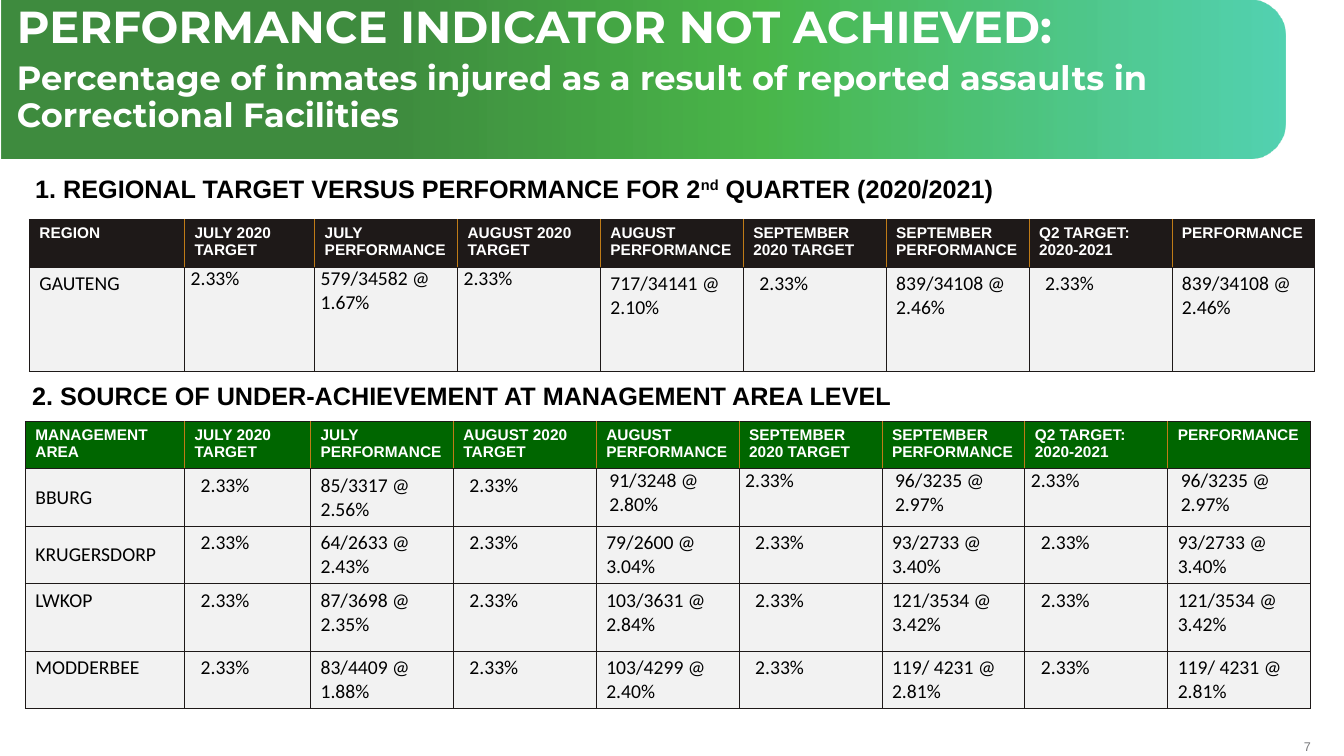
from copy import deepcopy
from dataclasses import dataclass

from lxml import etree
from pptx import Presentation
from pptx.dml.color import RGBColor
from pptx.enum.shapes import MSO_SHAPE
from pptx.enum.text import MSO_ANCHOR, PP_ALIGN
from pptx.oxml.ns import qn
from pptx.util import Inches, Pt

ROUNDED_TOP = MSO_SHAPE.ROUND_2_SAME_RECTANGLE
TOP, MIDDLE = MSO_ANCHOR.TOP, MSO_ANCHOR.MIDDLE
LEFT, RIGHT = PP_ALIGN.LEFT, PP_ALIGN.RIGHT
SLIDE_WIDTH, SLIDE_HEIGHT = Inches(13.33), Inches(7.5)


@dataclass(frozen=True)
class Theme:
    black: str = "000000"
    white: str = "FFFFFF"
    grey: str = "77787B"
    ink: str = "1E1918"
    green: str = "006600"
    divider: str = "BF7B17"
    cell: str = "F2F2F2"
    # position, colour and opacity, all but the colour in percent
    banner: tuple = ((30, "006600", 75), (59, "009900", 71), (100, "00BC8D", 67))
    title_font: str = "Montserrat"
    label_font: str = "Arial"
    body_font: str = "Calibri"
    title: int = 32
    subtitle: int = 24
    heading: int = 18
    body: int = 14
    column_head: int = 11
    number: int = 9


THEME = Theme()


@dataclass(frozen=True)
class Box:
    left: int
    top: int
    width: int
    height: int


def share(left, top, width, height):
    """Box given in percent of the slide's width and height."""
    return Box(int(SLIDE_WIDTH * left / 100), int(SLIDE_HEIGHT * top / 100),
               int(SLIDE_WIDTH * width / 100), int(SLIDE_HEIGHT * height / 100))


@dataclass(frozen=True)
class Area:
    """Table row; flush columns have no cell margins and their own indent."""
    name: str
    results: tuple
    height: int
    flush: tuple = ()
    flush_indent: float = 0
    name_anchor: int = TOP


TARGET = "2.33%"
COLUMN_HEADS = (
    "JULY 2020\vTARGET", "JULY PERFORMANCE",
    "AUGUST 2020\vTARGET", "AUGUST PERFORMANCE",
    "SEPTEMBER 2020 TARGET", "SEPTEMBER PERFORMANCE",
    "Q2 TARGET: 2020-2021", "PERFORMANCE",
)
TARGET_INDENT = 0.06
HEAD_HEIGHT = 47
REGIONS = (
    Area("GAUTENG", ("579/34582 @\n1.67%", "717/34141 @\n2.10%",
                     "839/34108 @ 2.46%", "839/34108 @\n2.46%"),
         103, (1, 2, 3), 0.06),
)
MANAGEMENT_AREAS = (
    Area("BBURG", ("85/3317 @\n2.56%", "91/3248 @\n2.80%",
                   "96/3235 @\n2.97%", "96/3235 @\n2.97%"),
         57, (4, 5, 6, 7, 8), 0.13, MIDDLE),
    Area("KRUGERSDORP", ("64/2633 @ 2.43%", "79/2600 @\n3.04%",
                         "93/2733 @\n3.40%", "93/2733 @\n3.40%"),
         57, name_anchor=MIDDLE),
    Area("LWKOP", ("87/3698 @\n2.35%", "103/3631 @\n2.84%",
                   "121/3534 @\n3.42%", "121/3534 @\n3.42%"), 67),
    Area("MODDERBEE", ("83/4409 @\n1.88%", "103/4299 @\n2.40%",
                       "119/ 4231 @\n2.81%", "119/ 4231 @\n2.81%"), 57),
)


def format_para(para, font, size, color, bold=False):
    for run in para.runs:
        run.font.name, run.font.size, run.font.bold = font, Pt(size), bold
        run.font.color.rgb = RGBColor.from_string(color)
    for line_break in para._p.findall(qn("a:br")):
        line_break.append(deepcopy(para.runs[0].font._element))


def add_text_box(slide, box, text):
    frame = slide.shapes.add_textbox(box.left, box.top, box.width, box.height).text_frame
    frame.word_wrap = True
    frame.text = text
    return frame


def solid_fill(parent, color):
    fill = etree.SubElement(parent, qn("a:solidFill"))
    return etree.SubElement(fill, qn("a:srgbClr"), val=color)


def add_banner(slide, box):
    """Bar with a gradient, rounded on the right: a tall shape turned by 90 degrees."""
    left = box.left + (box.width - box.height) // 2
    top = box.top + (box.height - box.width) // 2
    bar = slide.shapes.add_shape(ROUNDED_TOP, left, top, box.height, box.width)
    bar.rotation = 90
    bar.adjustments[0], bar.adjustments[1] = 0.233, 0
    bar.shadow.inherit = False
    bar.line.fill.background()
    gradient = etree.Element(qn("a:gradFill"), rotWithShape="1")
    stops = etree.SubElement(gradient, qn("a:gsLst"))
    for position, color, opacity in THEME.banner:
        stop = etree.SubElement(stops, qn("a:gs"), pos=str(position * 1000))
        tint = etree.SubElement(stop, qn("a:srgbClr"), val=color)
        etree.SubElement(tint, qn("a:alpha"), val=str(opacity * 1000))
    etree.SubElement(gradient, qn("a:lin"), ang=str(270 * 60000), scaled="0")
    bar._element.spPr.find(qn("a:prstGeom")).addnext(gradient)


def add_title(slide, box):
    frame = add_text_box(slide, box, "PERFORMANCE INDICATOR NOT ACHIEVED:\n"
                         "Percentage of inmates injured as a result of reported "
                         "assaults in Correctional Facilities")
    for para, size in zip(frame.paragraphs, (THEME.title, THEME.subtitle)):
        para.line_spacing, para.space_after = 0.9, Pt(6)
        format_para(para, THEME.title_font, size, THEME.white, True)


def add_heading(slide, box, text, superscript="", rest=""):
    para = add_text_box(slide, box, text).paragraphs[0]
    if superscript:
        raised = para.add_run()
        raised.text = superscript
        raised.font._element.set("baseline", "30000")
        para.add_run().text = rest
    format_para(para, THEME.label_font, THEME.heading, THEME.black, True)


def add_page_number(slide, box, number):
    frame = add_text_box(slide, box, number)
    frame.margin_left = frame.margin_right = frame.margin_top = frame.margin_bottom = 0
    frame.vertical_anchor = MIDDLE
    frame.paragraphs[0].alignment = RIGHT
    format_para(frame.paragraphs[0], THEME.label_font, THEME.number, THEME.grey)


def style_cell(cell, fill, left, right):
    """Sets the fill, and borders whose left and right colours are given."""
    properties = cell._tc.get_or_add_tcPr()
    for side, color in zip("LRTB", (left, right, THEME.ink, THEME.ink)):
        line = etree.SubElement(properties, qn("a:ln" + side), w=str(Pt(0.5)))
        solid_fill(line, color)
    cell.fill.solid()
    cell.fill.fore_color.rgb = RGBColor.from_string(fill)


def fill_head(table, heads, color):
    last = len(heads) - 1
    for column, head in enumerate(heads):
        cell = table.cell(0, column)
        style_cell(cell, color, THEME.divider if column else THEME.ink,
                   THEME.divider if column < last else THEME.ink)
        cell.text_frame.text = head
        format_para(cell.text_frame.paragraphs[0], THEME.label_font,
                    THEME.column_head, THEME.white, True)


def fill_area(table, row, area):
    texts = [area.name]
    for result in area.results:
        texts += [TARGET, result]
    for column, text in enumerate(texts):
        cell = table.cell(row, column)
        style_cell(cell, THEME.cell, THEME.ink, THEME.ink)
        cell.vertical_anchor = TOP if column else area.name_anchor
        indent = TARGET_INDENT if text == TARGET else 0
        if column in area.flush:
            cell.margin_left = cell.margin_right = cell.margin_top = cell.margin_bottom = 0
            indent = indent or area.flush_indent
        cell.text_frame.text = text
        for para in cell.text_frame.paragraphs:
            para.alignment = LEFT
            para._p.get_or_add_pPr().set("marL", str(Inches(indent)))
            format_para(para, THEME.body_font, THEME.body, THEME.black)


def add_results_table(slide, box, name_head, areas, head_color, first_widths):
    """First two column widths are percents of the table; the rest are equal."""
    heads = (name_head,) + COLUMN_HEADS
    table = slide.shapes.add_table(len(areas) + 1, len(heads), box.left, box.top,
                                   box.width, box.height).table
    table.horz_banding = False
    equal = (100 - sum(first_widths)) / (len(heads) - len(first_widths))
    widths = list(first_widths) + [equal] * (len(heads) - len(first_widths))
    for column, width in zip(table.columns, widths):
        column.width = int(box.width * width / 100)
    heights = [HEAD_HEIGHT] + [area.height for area in areas]
    for row, height in zip(table.rows, heights):
        row.height = int(box.height * height / sum(heights))
    fill_head(table, heads, head_color)
    for row, area in enumerate(areas, 1):
        fill_area(table, row, area)


def main():
    deck = Presentation()
    deck.slide_width, deck.slide_height = SLIDE_WIDTH, SLIDE_HEIGHT
    slide = deck.slides.add_slide(deck.slide_layouts[6])
    add_page_number(slide, share(94.6, 97.73, 2.93, 2), "7")
    add_banner(slide, share(0.15, 0, 95.5, 20.93))
    add_title(slide, share(0.53, 0, 89.87, 7.6))
    add_heading(slide, share(1.88, 22.27, 73.22, 5.33),
                "1. REGIONAL TARGET VERSUS PERFORMANCE FOR 2", "nd", " QUARTER (2020/2021)")
    add_heading(slide, share(1.65, 49.6, 72.39, 5.33),
                "2. SOURCE OF UNDER-ACHIEVEMENT AT MANAGEMENT AREA LEVEL")
    add_results_table(slide, share(2.18, 29.07, 95.65, 20), "REGION",
                      REGIONS, THEME.ink, (12.08, 10.12))
    add_results_table(slide, share(1.88, 55.73, 95.65, 38), "MANAGEMENT AREA",
                      MANAGEMENT_AREAS, THEME.green, (12.39, 9.8))
    deck.save("out.pptx")


if __name__ == "__main__":
    main()
